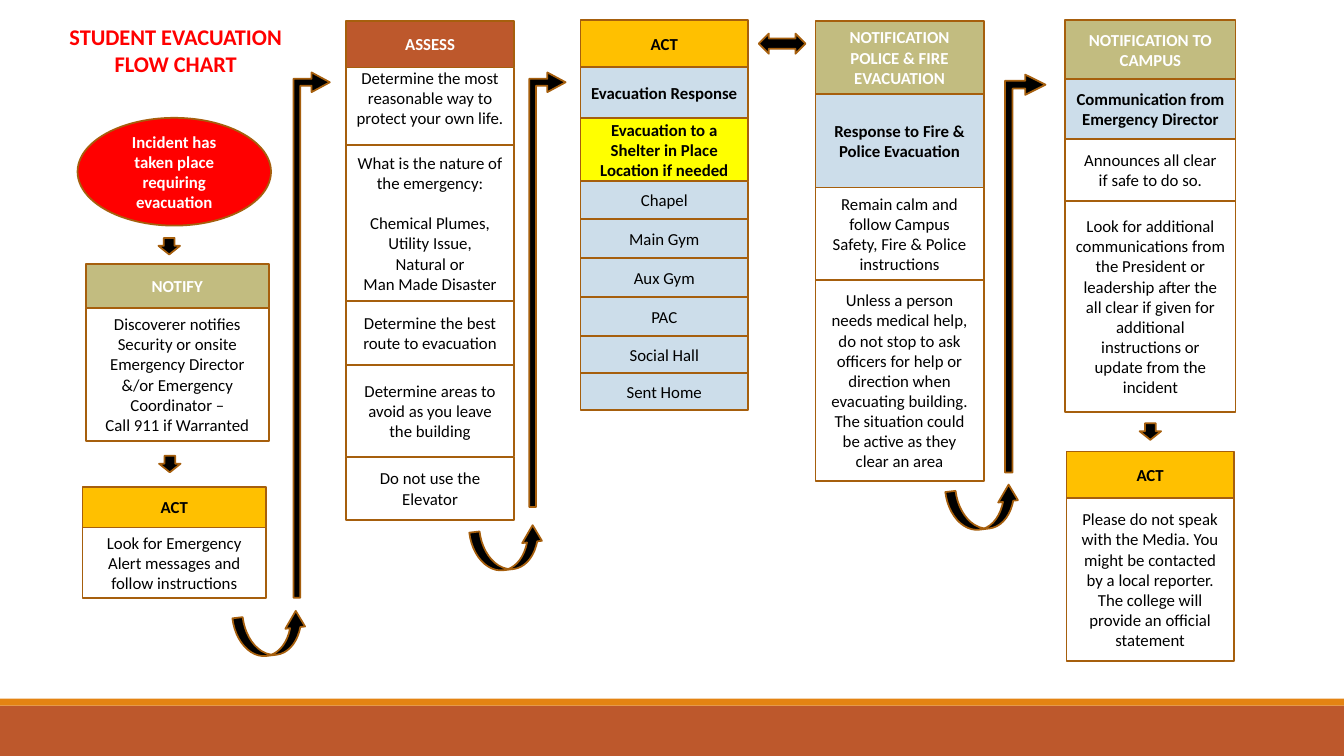
from pptx import Presentation
from pptx.dml.color import RGBColor
from pptx.enum.shapes import MSO_SHAPE
from pptx.enum.text import MSO_ANCHOR, PP_ALIGN
from pptx.util import Pt

RECT = MSO_SHAPE.RECTANGLE
OVAL = MSO_SHAPE.FLOWCHART_CONNECTOR
BENT = MSO_SHAPE.BENT_ARROW
DOWN = MSO_SHAPE.DOWN_ARROW
CURVED = MSO_SHAPE.CURVED_DOWN_ARROW
DOUBLE = MSO_SHAPE.LEFT_RIGHT_ARROW
CENTER = PP_ALIGN.CENTER
TOP, MIDDLE = MSO_ANCHOR.TOP, MSO_ANCHOR.MIDDLE

BLACK, WHITE, RED = "000000", "FFFFFF", "FF0000"
RUST, ORANGE, BROWN = "BD582C", "E48312", "A65F0D"

# Box styles: fill, text colour, bold
NOTICE = ("C2BC80", WHITE, True)
ASSESS = (RUST, WHITE, True)
ACT = ("FFC000", BLACK, True)
TOPIC = ("CCDDEA", BLACK, True)
SHELTER = ("FFFF00", BLACK, True)
PLACE = ("CCDDEA", BLACK, False)
STEP = (WHITE, BLACK, False)
INCIDENT = (RED, WHITE, True)

# Each stack: left, top, width, then boxes of height, style, text
STACKS = [
    (61.2, 188.4, 131, [
        (31.4, NOTICE, "NOTIFY"),
        (95, STEP, "Discoverer notifies Security or onsite Emergency Director "
                   "&/or Emergency Coordinator –\nCall 911 if Warranted"),
    ]),
    (59, 347.8, 131, [
        (29, ACT, "ACT"),
        (50.4, STEP, "Look for Emergency Alert messages and follow instructions"),
    ]),
    (247, 15, 120.4, [
        (33.2, ASSESS, "ASSESS"),
        (55.5, STEP, "Determine the most reasonable way to protect your own life."),
        (111.3, STEP, "What is the nature of the emergency:\n"
                      "Chemical Plumes, Utility Issue,\nNatural or\nMan Made Disaster"),
        (45.8, STEP, "Determine the best route to evacuation"),
        (65.4, STEP, "Determine areas to avoid as you leave the building"),
        (45.2, STEP, "Do not use the Elevator"),
    ]),
    (414.7, 14.4, 119.6, [
        (33.3, ACT, "ACT"),
        (36.5, TOPIC, "Evacuation Response"),
        (45.4, SHELTER, "Evacuation to a Shelter in Place Location if needed"),
        (26.7, PLACE, "Chapel"),
        (28, PLACE, "Main Gym"),
        (28, PLACE, "Aux Gym"),
        (28, PLACE, "PAC"),
        (26.3, PLACE, "Social Hall"),
        (26.3, PLACE, "Sent Home"),
    ]),
    (582.5, 15, 120.2, [
        (52, NOTICE, "NOTIFICATION POLICE & FIRE EVACUATION"),
        (67, TOPIC, "Response to Fire &\nPolice Evacuation"),
        (66.2, STEP, "Remain calm and follow Campus Safety, Fire & Police instructions"),
        (143.3, STEP, "Unless a person needs medical help, do not stop to ask "
                      "officers for help or direction when evacuating building. "
                      "The situation could be active as they clear an area"),
    ]),
    (761, 14.4, 121.6, [
        (41.8, NOTICE, "NOTIFICATION TO CAMPUS"),
        (43.2, TOPIC, "Communication from Emergency Director"),
        (44, STEP, "Announces all clear\nif safe to do so."),
        (151, STEP, "Look for additional communications from the President or "
                    "leadership after the all clear if given for additional "
                    "instructions or update from the incident"),
    ]),
    (761.8, 322.4, 119.5, [
        (33.3, ACT, "ACT"),
        (116.6, STEP, "Please do not speak with the Media. You might be contacted "
                      "by a local reporter. The college will provide an official "
                      "statement"),
    ]),
]


def color(hex_code):
    return RGBColor.from_string(hex_code)


def add_shape(slide, kind, x, y, w, h, fill, line=BROWN):
    s = slide.shapes.add_shape(kind, Pt(x), Pt(y), Pt(w), Pt(h))
    s.shadow.inherit = False
    s.fill.solid()
    s.fill.fore_color.rgb = color(fill)
    if line:
        s.line.color.rgb = color(line)
        s.line.width = Pt(1.25)
    else:
        s.line.fill.background()
    return s


def write(s, text, text_color, bold, size=12, anchor=MIDDLE):
    tf = s.text_frame
    tf.word_wrap = True
    tf.vertical_anchor = anchor
    for i, line in enumerate(text.split("\n")):
        p = tf.paragraphs[0] if i == 0 else tf.add_paragraph()
        p.text = line
        p.alignment = CENTER
        p.font.name = "Calibri"
        p.font.size = Pt(size)
        p.font.bold = bold
        p.font.color.rgb = color(text_color)
    return tf


def add_box(slide, kind, x, y, w, h, style, text):
    fill, text_color, bold = style
    s = add_shape(slide, kind, x, y, w, h, fill)
    return write(s, text, text_color, bold)


def add_stack(slide, x, y, w, boxes):
    frames = []
    for h, style, text in boxes:
        frames.append(add_box(slide, RECT, x, y, w, h, style, text))
        y += h
    return frames


def add_arrow(slide, kind, x, y, w, h, *adjustments):
    s = add_shape(slide, kind, x, y, w, h, BLACK)
    for i, value in enumerate(adjustments):
        s.adjustments[i] = value
    return s


def add_hook(slide, x, y):
    s = add_arrow(slide, CURVED, x, y, 52.6, 29.5, 0.25, 0.48, 0.4)
    s.rotation = 173.3
    s._element.spPr.get_or_add_xfrm().set("flipH", "1")


def main():
    prs = Presentation()
    prs.slide_width, prs.slide_height = Pt(960), Pt(540)
    slide = prs.slides.add_slide(prs.slide_layouts[6])

    # Footer bands
    add_shape(slide, RECT, 0, 504, 960, 36, RUST, None)
    add_shape(slide, RECT, 0, 499, 960, 5, ORANGE, None)

    # Title and starting incident
    title = add_shape(slide, RECT, 29.5, 13, 192, 46, WHITE, None)
    write(title, "STUDENT EVACUATION\nFLOW CHART", RED, True, 16, TOP)
    add_box(slide, OVAL, 55.4, 84.2, 138.2, 77, INCIDENT,
            "Incident has taken place requiring evacuation")

    # Columns of boxes
    frames = [add_stack(slide, *stack) for stack in STACKS]
    assess = frames[2]
    assess[1].vertical_anchor = TOP
    assess[1].margin_top = 0
    assess[2].paragraphs[1].space_before = Pt(14.5)

    # Short arrows within the columns
    for x, y in [(113.2, 170), (113.6, 325.6), (814, 302.4)]:
        add_arrow(slide, DOWN, x, y, 15.4, 11.8, 0.5, 0.52)
    add_arrow(slide, DOUBLE, 542, 24, 33.4, 14.4, 0.5, 0.5)

    # Hooks and tall arrows leading to the next column
    for x, y, w, h, head in [(209.6, 51.8, 26, 375.2, 0.27),
                             (378, 51.8, 26, 310.4, 0.27),
                             (717.8, 53.3, 29, 284.2, 0.25)]:
        add_arrow(slide, BENT, x, y, w, h, 0.19, head, 0.5, 0)
    for x, y in [(167.6, 438.5), (336.8, 377.3), (676.8, 348.3)]:
        add_hook(slide, x, y)

    prs.save("out.pptx")


if __name__ == "__main__":
    main()
